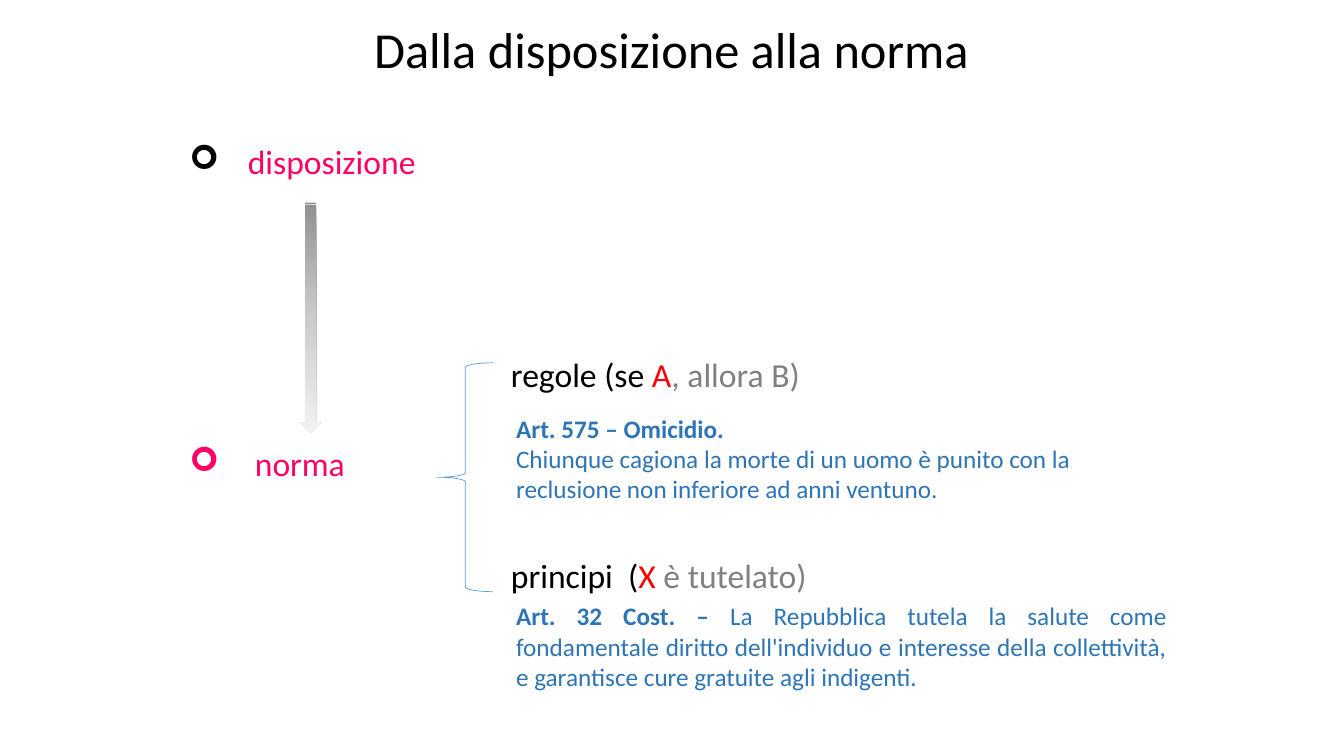
from copy import deepcopy
from dataclasses import dataclass

from lxml import etree
from pptx import Presentation
from pptx.dml.color import RGBColor
from pptx.enum.shapes import MSO_SHAPE
from pptx.enum.text import MSO_ANCHOR, MSO_AUTO_SIZE, PP_ALIGN
from pptx.oxml.ns import qn
from pptx.slide import Slide
from pptx.text.text import TextFrame
from pptx.util import Inches, Pt

ARROW = MSO_SHAPE.STRIPED_RIGHT_ARROW
BRACE = MSO_SHAPE.LEFT_BRACE
BOTTOM, TOP = MSO_ANCHOR.BOTTOM, MSO_ANCHOR.TOP
NONE, GROW = MSO_AUTO_SIZE.NONE, MSO_AUTO_SIZE.SHAPE_TO_FIT_TEXT
LEFT, CENTER, FULL = PP_ALIGN.LEFT, PP_ALIGN.CENTER, PP_ALIGN.JUSTIFY


@dataclass(frozen=True)
class Theme:
    font: str = "Calibri"
    title: int = 36
    label: int = 24
    body: int = 18
    black: str = "000000"
    pink: str = "FF0066"
    red: str = "FF0000"
    gray: str = "808080"
    blue: str = "2E75B6"
    line: str = "5B9BD5"
    fade: tuple[str, ...] = ("909090", "CCCCCC", "F2F2F2")


THEME = Theme()


@dataclass(frozen=True)
class Run:
    text: str
    color: str
    bold: bool = False


@dataclass(frozen=True)
class Block:
    box: tuple[float, float, float, float]
    paras: tuple[tuple[Run, ...], ...]
    size: int
    space: float = 1.0
    align: PP_ALIGN = LEFT
    fit: MSO_AUTO_SIZE = NONE
    indent: float = 0
    mark: str = ""


TITLE = Block(
    (2.41, 0.21, 8.5, 0.63),
    ((Run("Dalla disposizione alla norma", THEME.black),),),
    THEME.title, 0.9, CENTER,
)


def item(top: float, text: str, indent: float, mark: str) -> Block:
    return Block((1.78, top, 3, 0.47), ((Run(text, THEME.pink),),),
                 THEME.label, 0.9, indent=indent, mark=mark)


def label(top: float, *runs: Run) -> Block:
    return Block((4.97, top, 6, 0.47), (runs,), THEME.label, 0.9)


def quote(top: float, align: PP_ALIGN, *paras: tuple[Run, ...]) -> Block:
    return Block((5.02, top, 6.65, 1.01), paras, THEME.body,
                 align=align, fit=GROW)


BLOCKS = (
    item(1.39, "disposizione", 0.58, THEME.black),
    item(4.39, "norma", 0.65, THEME.pink),
    label(3.51, Run("regole (se ", THEME.black), Run("A", THEME.red),
          Run(", allora B)", THEME.gray)),
    label(5.5, Run("principi  (", THEME.black), Run("X ", THEME.red),
          Run("è tutelato)", THEME.gray)),
    quote(4.05, LEFT,
          (Run("Art. 575 – Omicidio.", THEME.blue, True),),
          (Run("Chiunque cagiona la morte di un uomo è punito con la "
               "reclusione non inferiore ad anni ventuno.", THEME.blue),)),
    quote(5.91, FULL,
          (Run("Art. 32 Cost. – ", THEME.blue, True),
           Run("La Repubblica tutela la salute come fondamentale diritto "
               "dell'individuo e interesse della collettività, e garantisce "
               "cure gratuite agli indigenti.", THEME.blue))),
)


def apply(target: object, values: dict[str, object]) -> None:
    for name, value in values.items():
        setattr(target, name, value)


def bullet(para: object, block: Block) -> None:
    props = para._p.get_or_add_pPr()
    props.set("marL", str(Inches(block.indent)))
    props.set("indent", str(-Inches(block.indent)))
    color = etree.SubElement(props, qn("a:buClr"))
    etree.SubElement(color, qn("a:srgbClr"), val=block.mark)
    etree.SubElement(props, qn("a:buFont"), typeface="Wingdings")
    etree.SubElement(props, qn("a:buChar"), char="➢")


def write(frame: TextFrame, block: Block, anchor: MSO_ANCHOR = TOP) -> None:
    apply(frame, {"word_wrap": True, "auto_size": block.fit,
                  "vertical_anchor": anchor})
    for num, runs in enumerate(block.paras):
        para = frame.add_paragraph() if num else frame.paragraphs[0]
        if block.mark:
            bullet(para, block)
        apply(para, {"alignment": block.align, "line_spacing": block.space,
                     "space_before": Pt(0)})
        for part in runs:
            run = para.add_run()
            run.text = part.text
            apply(run.font, {"name": THEME.font, "size": Pt(block.size),
                             "bold": part.bold})
            run.font.color.rgb = RGBColor.from_string(part.color)


def head(slide: Slide, block: Block) -> None:
    title = slide.shapes.title
    names = ("left", "top", "width", "height")
    apply(title, dict(zip(names, map(Inches, block.box))))
    write(title.text_frame, block, BOTTOM)


def arrow(slide: Slide) -> None:
    shape = slide.shapes.add_shape(ARROW, *map(Inches, (1.93, 3.04, 2.3, 0.22)))
    shape.rotation = 90
    shape.shadow.inherit = False
    shape.line.fill.background()
    fill = shape.fill
    fill.gradient()
    fill.gradient_angle = 0
    stops = shape._element.spPr.find(qn("a:gradFill")).find(qn("a:gsLst"))
    stops.insert(1, deepcopy(stops[0]))
    for num, (stop, color) in enumerate(zip(fill.gradient_stops, THEME.fade)):
        stop.position = num / 2
        stop.color.rgb = RGBColor.from_string(color)


def brace(slide: Slide) -> None:
    shape = slide.shapes.add_shape(BRACE, *map(Inches, (4.34, 3.6, 0.55, 2.27)))
    shape.shadow.inherit = False
    shape.fill.background()
    shape.line.color.rgb = RGBColor.from_string(THEME.line)
    shape.line.width = Pt(0.5)


def main() -> None:
    deck = Presentation()
    apply(deck, {"slide_width": Inches(13.33), "slide_height": Inches(7.5)})
    slide = deck.slides.add_slide(deck.slide_layouts[5])
    head(slide, TITLE)
    arrow(slide)
    brace(slide)
    for block in BLOCKS:
        box = slide.shapes.add_textbox(*map(Inches, block.box))
        write(box.text_frame, block)
    deck.save("out.pptx")


if __name__ == "__main__":
    main()
